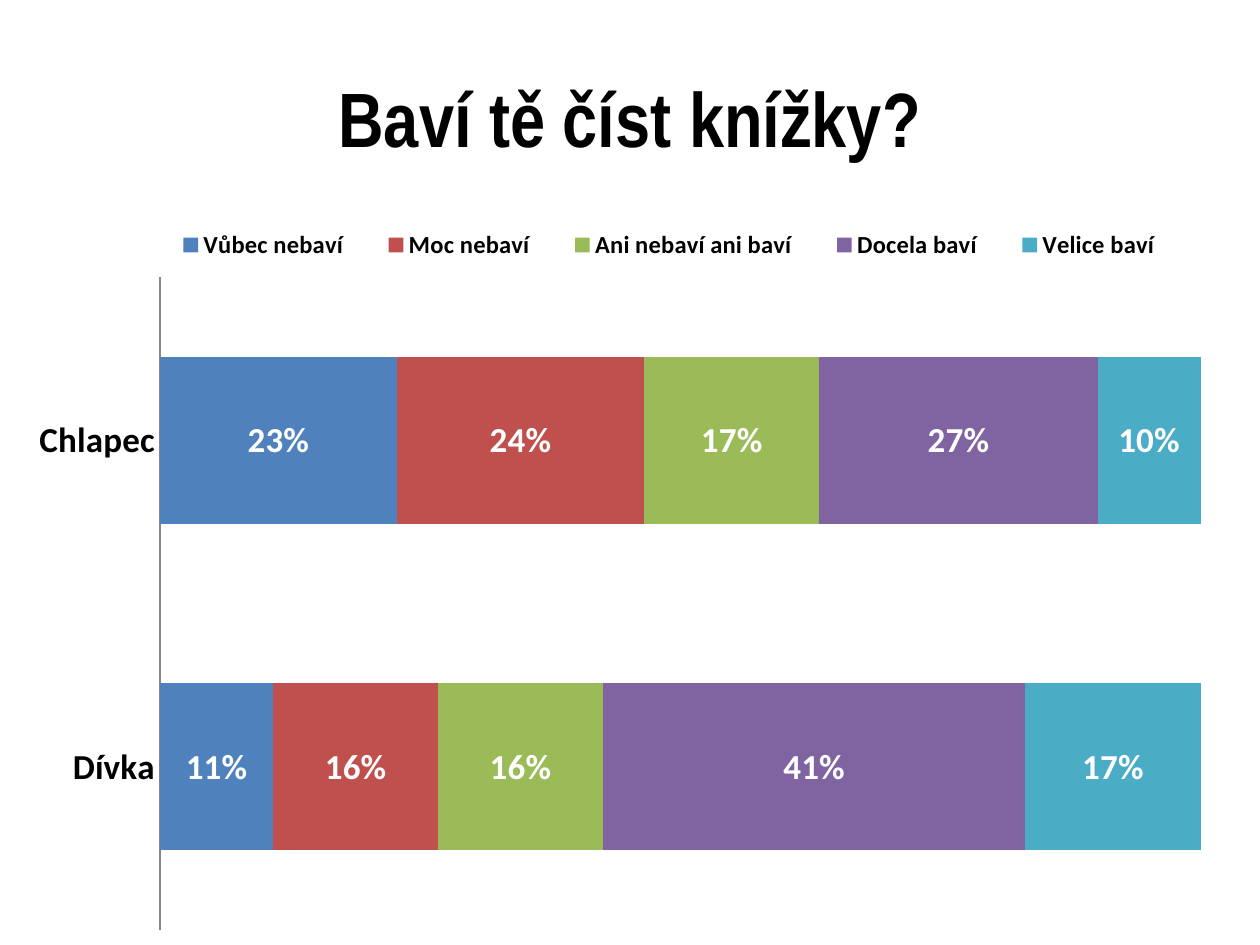
from lxml import etree
from pptx import Presentation
from pptx.chart.data import CategoryChartData
from pptx.dml.color import RGBColor
from pptx.enum.chart import XL_CHART_TYPE, XL_LEGEND_POSITION, XL_TICK_MARK
from pptx.enum.text import MSO_ANCHOR, PP_ALIGN
from pptx.oxml.ns import qn
from pptx.util import Inches, Pt

STACKED = XL_CHART_TYPE.BAR_STACKED_100
LEGEND_TOP = XL_LEGEND_POSITION.TOP
NO_TICK = XL_TICK_MARK.NONE
MIDDLE, CENTER = MSO_ANCHOR.MIDDLE, PP_ALIGN.CENTER

TITLE_BOX = (0.5, 0.3, 9, 1.25)
CHART_BOX = (0.12, 1.7, 9.61, 5.8)
LEGEND_BOX = (1.16, 1.77, 8.3, 0.35)
PLOT_BOX = (1.27, 2.2, 8.26, 5.18)

PERCENT = "###0%"
CATEGORIES = ["Dívka", "Chlapec"]
SERIES = [
    ("Vůbec nebaví", (0.11, 0.23), "4F81BD"),
    ("Moc nebaví", (0.16, 0.24), "C0504D"),
    ("Ani nebaví ani baví", (0.16, 0.17), "9BBB59"),
    ("Docela baví", (0.41, 0.27), "8064A2"),
    ("Velice baví", (0.17, 0.1), "4BACC6"),
]


def color(value):
    return RGBColor.from_string(value)


def set_font(font, size, rgb="000000", name="Calibri", bold=True):
    values = {"size": Pt(size), "name": name, "bold": bold}
    for key, value in values.items():
        setattr(font, key, value)
    font.color.rgb = color(rgb)


def set_layout(parent, index, box, frame, inner=False):
    """Fix a chart part at a slide box, as fractions of the chart frame."""
    for old in parent.findall(qn("c:layout")):
        parent.remove(old)
    layout = etree.Element(qn("c:layout"))
    manual = etree.SubElement(layout, qn("c:manualLayout"))
    x, y, w, h = box
    left, top, width, height = frame
    values = {"layoutTarget": "inner"} if inner else {}
    values |= {"xMode": "edge", "yMode": "edge",
               "x": (x - left) / width, "y": (y - top) / height,
               "w": w / width, "h": h / height}
    for tag, value in values.items():
        etree.SubElement(manual, qn(f"c:{tag}")).set("val", str(value))
    parent.insert(index, layout)


def add_title(slide, box):
    title = slide.shapes.title
    title.left, title.top, title.width, title.height = map(Inches, box)
    tf = title.text_frame
    tf.vertical_anchor = MIDDLE
    p = tf.paragraphs[0]
    p.alignment = CENTER
    r = p.add_run()
    r.text = "Baví tě číst knížky?"
    set_font(r.font, 44, name="Arial Narrow")


def add_reading_chart(slide, box):
    data = CategoryChartData(number_format=PERCENT)
    data.categories = CATEGORIES
    for name, values, _ in SERIES:
        data.add_series(name, values)
    chart = slide.shapes.add_chart(STACKED, *map(Inches, box), data).chart
    chart.has_title = False
    set_font(chart.font, 10, bold=False)

    # Bars and their labels
    plot = chart.plots[0]
    plot.gap_width, plot.overlap = 95, 100
    plot.vary_by_categories = False
    for series, (_, _, fill) in zip(plot.series, SERIES):
        series.format.fill.solid()
        series.format.fill.fore_color.rgb = color(fill)
        labels = series.data_labels
        labels.show_value = True
        labels.number_format = PERCENT
        labels.number_format_is_linked = False
        set_font(labels.font, 20, "FFFFFF")

    # Axes
    axis = chart.category_axis
    axis.major_tick_mark = axis.minor_tick_mark = NO_TICK
    axis.format.line.color.rgb = color("868686")
    axis.format.line.width = Pt(0.75)
    set_font(axis.tick_labels.font, 20)
    chart.value_axis.visible = False
    chart.value_axis.has_major_gridlines = False

    # Legend
    chart.has_legend = True
    legend = chart.legend
    legend.position = LEGEND_TOP
    legend.include_in_layout = False
    set_font(legend.font, 14)

    root = chart.element
    set_layout(root.find(".//" + qn("c:legend")), 1, LEGEND_BOX, box)
    set_layout(root.find(".//" + qn("c:plotArea")), 0, PLOT_BOX, box, inner=True)


def main():
    prs = Presentation()
    prs.slide_width, prs.slide_height = Inches(10), Inches(7.5)
    slide = prs.slides.add_slide(prs.slide_layouts[5])
    add_title(slide, TITLE_BOX)
    add_reading_chart(slide, CHART_BOX)
    prs.save("out.pptx")


if __name__ == "__main__":
    main()
